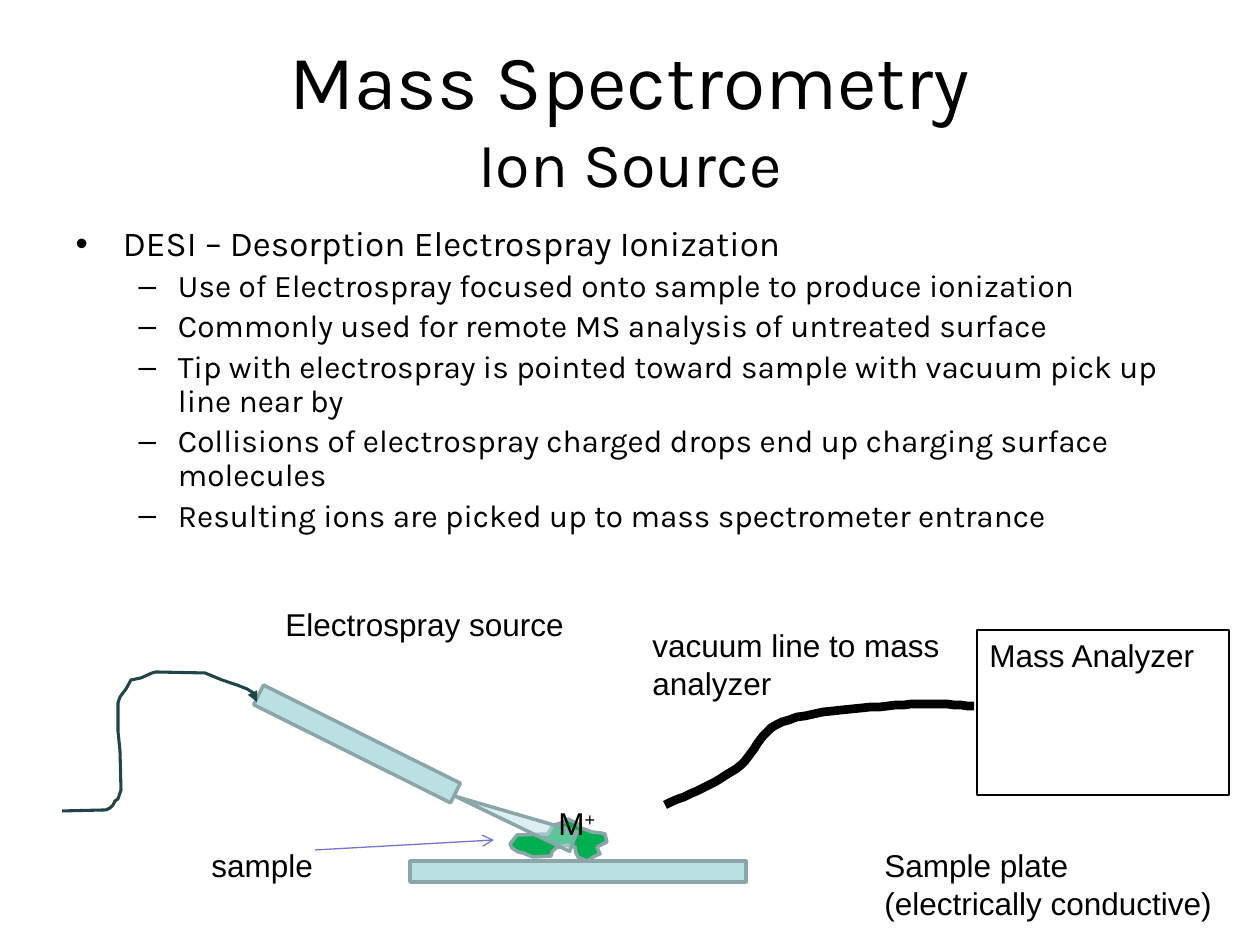
from lxml import etree
from pptx import Presentation
from pptx import util as u
from pptx.dml.color import RGBColor
from pptx.enum import shapes, text
from pptx.oxml.ns import qn

PX = u.Inches(1) / 126
THEME = {
    "black": "000000", "glass": "BBE0E3", "edge": "8AA6A8", "sample": "00B050",
    "pointer": "7575D1", "tube": "1E4649",
    "head_font": "Karla", "label_font": "Arial",
    "title": 44, "subtitle": 36, "topic": 20, "point": 18, "label": 18,
}

TITLE = [("Mass Spectrometry", "title"), ("Ion Source", "subtitle")]
TITLE_BOX = (63, 38, 1134, 157)
BODY_BOX = (63, 220, 1134, 451)
BODY = [
    (0, "DESI – Desorption Electrospray Ionization"),
    (1, "Use of Electrospray focused onto sample to produce ionization"),
    (1, "Commonly used for remote MS analysis of untreated surface"),
    (1, "Tip with electrospray is pointed toward sample with vacuum pick up line near by"),
    (1, "Collisions of electrospray charged drops end up charging surface molecules"),
    (1, "Resulting ions are picked up to mass spectrometer entrance"),
]

NEEDLE = (247, 733, 220, 22)
PLATE = (410, 861, 336, 21)
SPRAY = (504, 756, 21, 126)
ANALYZER = (977, 630, 252, 165)
POINTER = (315, 850, 494, 840)
LABELS = [
    ("Sample plate (electrically conductive)", (872, 840, 357, 89)),
    ("sample", (199, 840, 136, 53)),
    ("Electrospray source", (273, 599, 357, 50)),
    ("vacuum line to mass analyzer", (640, 620, 336, 89)),
]
ION_BOX = (546, 798, 73, 50)

SAMPLE = [
    (564, 822), (558, 824), (553, 825), (548, 834), (517, 835), (510, 844),
    (512, 848), (518, 852), (523, 853), (533, 857), (551, 856), (552, 852),
    (556, 848), (566, 845), (575, 847), (576, 853), (578, 857), (587, 861),
    (595, 856), (600, 854), (597, 847), (607, 842), (605, 834), (601, 833),
    (592, 832), (587, 830), (581, 828), (578, 824), (568, 819),
]
FEED_TUBE = [
    (62, 811), (106, 810), (110, 808), (113, 805), (115, 801), (118, 799),
    (121, 790), (120, 751), (118, 731), (118, 703), (120, 697), (126, 689),
    (131, 680), (141, 678), (152, 673), (156, 672), (205, 673), (222, 680),
    (237, 685), (247, 689), (252, 692), (257, 699), (257, 702),
]
# Start point, then two control points and an end point for each curve
VACUUM_LINE = [
    (665, 805), (690, 794), (717, 782), (736, 769), (756, 755), (757, 733),
    (782, 722), (808, 712), (856, 708), (888, 706), (920, 703), (948, 704), (974, 706),
]


def emu(values):
    return [round(v * PX) for v in values]


def rgb(name):
    return RGBColor.from_string(THEME[name])


def add_run(p, words, font, size):
    r = p.add_run()
    r.text = words
    r.font.name = THEME[font]
    r.font.size = u.Pt(THEME[size])
    r.font.color.rgb = rgb("black")
    return r


def place(sp, box):
    sp.left, sp.top, sp.width, sp.height = emu(box)


def style(sp, fill, line, width):
    sp.shadow.inherit = False
    if fill:
        sp.fill.solid()
        sp.fill.fore_color.rgb = rgb(fill)
    else:
        sp.fill.background()
    sp.line.color.rgb = rgb(line)
    sp.line.width = u.Pt(width)
    return sp


def add_head(sp, kind):
    etree.SubElement(sp.line._get_or_add_ln(), qn("a:tailEnd"), type=kind)


def add_preset(s, kind, box, fill="glass", line="edge", width=2, rotation=0):
    sp = style(s.shapes.add_shape(kind, *emu(box)), fill, line, width)
    sp.rotation = rotation
    return sp


def add_outline(s, points, fill, line, width, close=False):
    builder = s.shapes.build_freeform(*points[0], scale=PX)
    builder.add_line_segments(points[1:], close=close)
    return style(builder.convert_to_shape(), fill, line, width)


def sample_curves(points, steps=12):
    """Turn chained cubic Bezier curves into a list of points."""
    result = [points[0]]
    for i in range(0, len(points) - 1, 3):
        for k in range(1, steps + 1):
            t = k / steps
            weights = ((1 - t) ** 3, 3 * t * (1 - t) ** 2, 3 * t * t * (1 - t), t ** 3)
            result.append(tuple(sum(w * pt[axis] for w, pt in zip(weights, points[i:i + 4]))
                                for axis in (0, 1)))
    return result


def write_label(sp, words):
    tf = sp.text_frame
    tf.word_wrap = True
    tf.vertical_anchor = text.MSO_ANCHOR.TOP
    p = tf.paragraphs[0]
    p.alignment = text.PP_ALIGN.LEFT
    add_run(p, words, "label_font", "label")
    return p


def add_label(s, words, box):
    return write_label(s.shapes.add_textbox(*emu(box)), words)


def fill_placeholders(s):
    title, body = s.shapes.title, s.placeholders[1]
    place(title, TITLE_BOX)
    place(body, BODY_BOX)
    for sp in (title, body):
        sp.text_frame.auto_size = text.MSO_AUTO_SIZE.NONE

    p = title.text_frame.paragraphs[0]
    for i, (words, size) in enumerate(TITLE):
        if i:
            p.add_line_break()
        add_run(p, words, "head_font", size)

    tf = body.text_frame
    for i, (level, words) in enumerate(BODY):
        p = tf.add_paragraph() if i else tf.paragraphs[0]
        p.level = level
        p.line_spacing = 0.9
        add_run(p, words, "head_font", ("topic", "point")[level])


def draw_apparatus(s):
    rect = shapes.MSO_SHAPE.RECTANGLE
    add_preset(s, rect, NEEDLE, rotation=26.5)
    add_preset(s, rect, PLATE)
    add_outline(s, SAMPLE, "sample", "edge", 2, close=True)

    pointer = s.shapes.add_connector(shapes.MSO_CONNECTOR.STRAIGHT, *emu(POINTER))
    pointer.line.color.rgb = rgb("pointer")
    pointer.line.width = u.Pt(0.75)
    add_head(pointer, "arrow")
    etree.SubElement(pointer._element.spPr, qn("a:effectLst"))

    add_head(add_outline(s, FEED_TUBE, None, "tube", 1.75), "triangle")
    add_outline(s, sample_curves(VACUUM_LINE), None, "black", 5)
    write_label(add_preset(s, rect, ANALYZER, None, "black", 0.75), "Mass Analyzer")

    spray = add_preset(s, shapes.MSO_SHAPE.ISOSCELES_TRIANGLE, SPRAY, rotation=291)
    color = spray._element.spPr.find(qn("a:solidFill"))[0]
    etree.SubElement(color, qn("a:alpha"), val="49000")

    for words, box in LABELS:
        add_label(s, words, box)
    charge = add_run(add_label(s, "M", ION_BOX), "+", "label_font", "label")
    charge.font._element.set("baseline", "30000")


def main():
    prs = Presentation()
    prs.slide_width, prs.slide_height = emu((1260, 945))
    s = prs.slides.add_slide(prs.slide_layouts[1])
    fill_placeholders(s)
    draw_apparatus(s)
    prs.save("out.pptx")


if __name__ == "__main__":
    main()
